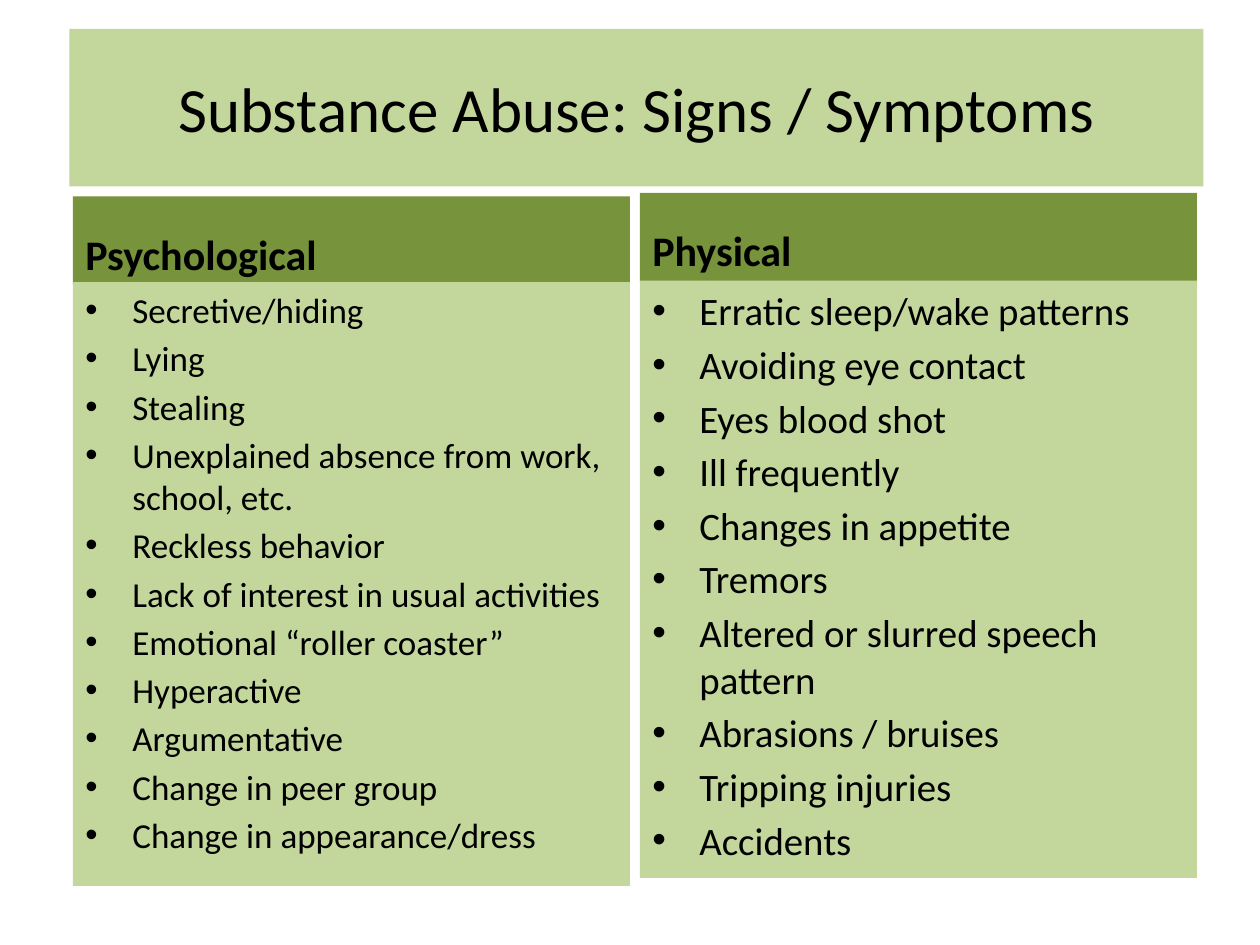
from lxml import etree
from pptx import Presentation
from pptx.dml.color import RGBColor
from pptx.enum.shapes import MSO_SHAPE
from pptx.enum.text import MSO_ANCHOR, PP_ALIGN
from pptx.oxml.ns import qn
from pptx.util import Cm, Pt

RECTANGLE = MSO_SHAPE.RECTANGLE
TOP, MIDDLE, BOTTOM = MSO_ANCHOR.TOP, MSO_ANCHOR.MIDDLE, MSO_ANCHOR.BOTTOM
LEFT, CENTER = PP_ALIGN.LEFT, PP_ALIGN.CENTER
TITLE_ONLY = 5

COLORS = {"light": "C3D69B", "dark": "77933C", "text": "000000"}
COLUMN_WIDTH = 11.23
INDENT = 0.95

COLUMNS = [
    {
        "heading": "Psychological",
        "left": 1.47,
        "heading_top": 3.96,
        "list_top": 5.69,
        "list_height": 12.17,
        "size": 20,
        "gap": 3.6,
        "signs": [
            "Secretive/hiding",
            "Lying",
            "Stealing",
            "Unexplained absence from work, school, etc.",
            "Reckless behavior",
            "Lack of interest in usual activities",
            "Emotional “roller coaster”",
            "Hyperactive",
            "Argumentative",
            "Change in peer group",
            "Change in appearance/dress",
        ],
    },
    {
        "heading": "Physical",
        "left": 12.9,
        "heading_top": 3.89,
        "list_top": 5.66,
        "list_height": 12.04,
        "size": 22.2,
        "gap": 4,
        "signs": [
            "Erratic sleep/wake patterns",
            "Avoiding eye contact",
            "Eyes blood shot",
            "Ill frequently",
            "Changes in appetite",
            "Tremors",
            "Altered or slurred speech pattern",
            "Abrasions / bruises",
            "Tripping injuries",
            "Accidents",
        ],
    },
]


def add_bullet(paragraph):
    properties = paragraph._p.get_or_add_pPr()
    properties.set("marL", str(Cm(INDENT)))
    properties.set("indent", str(-Cm(INDENT)))
    etree.SubElement(properties, qn("a:buFont")).set("typeface", "Arial")
    etree.SubElement(properties, qn("a:buChar")).set("char", "•")


def write_text(paragraph, text, size, font="Calibri", color="text", bold=False,
               align=LEFT, space_before=0, bullet=False):
    if bullet:
        add_bullet(paragraph)
    paragraph.text = text
    paragraph.alignment = align
    paragraph.space_before = Pt(space_before)
    paragraph.font.name = font
    paragraph.font.size = Pt(size)
    paragraph.font.bold = bold
    paragraph.font.color.rgb = RGBColor.from_string(COLORS[color])


class SlideBuilder:
    def __init__(self, slide, font="Calibri"):
        self.slide = slide
        self.font = font

    def fill(self, shape, color):
        shape.fill.solid()
        shape.fill.fore_color.rgb = RGBColor.from_string(COLORS[color])

    def title(self, text, left, top, width, height):
        shape = self.slide.shapes.title
        shape.left, shape.top = Cm(left), Cm(top)
        shape.width, shape.height = Cm(width), Cm(height)
        self.fill(shape, "light")
        shape.text_frame.vertical_anchor = MIDDLE
        write_text(shape.text_frame.paragraphs[0], text, 36,
                   font=self.font, align=CENTER)

    def panel(self, lines, left, top, width, height, color, anchor, size,
              gap=0, **text_format):
        shape = self.slide.shapes.add_shape(
            RECTANGLE, Cm(left), Cm(top), Cm(width), Cm(height))
        shape.shadow.inherit = False
        shape.line.fill.background()
        self.fill(shape, color)
        frame = shape.text_frame
        frame.word_wrap = True
        frame.vertical_anchor = anchor
        for index, line in enumerate(lines):
            paragraph = frame.add_paragraph() if index else frame.paragraphs[0]
            write_text(paragraph, line, size, font=self.font,
                       space_before=gap if index else 0, **text_format)

    def column(self, heading, left, heading_top, list_top, list_height, size,
               gap, signs):
        self.panel([heading], left, heading_top, COLUMN_WIDTH, 1.78,
                   "dark", BOTTOM, 24, bold=True)
        self.panel(signs, left, list_top, COLUMN_WIDTH, list_height,
                   "light", TOP, size, gap=gap, bullet=True)


def main():
    presentation = Presentation()
    presentation.slide_width, presentation.slide_height = Cm(25.4), Cm(19.05)
    layout = presentation.slide_layouts[TITLE_ONLY]
    builder = SlideBuilder(presentation.slides.add_slide(layout))
    builder.title("Substance Abuse: Signs / Symptoms", 1.4, 0.58, 22.86, 3.18)
    for column in COLUMNS:
        builder.column(**column)
    presentation.save("out.pptx")


if __name__ == "__main__":
    main()
